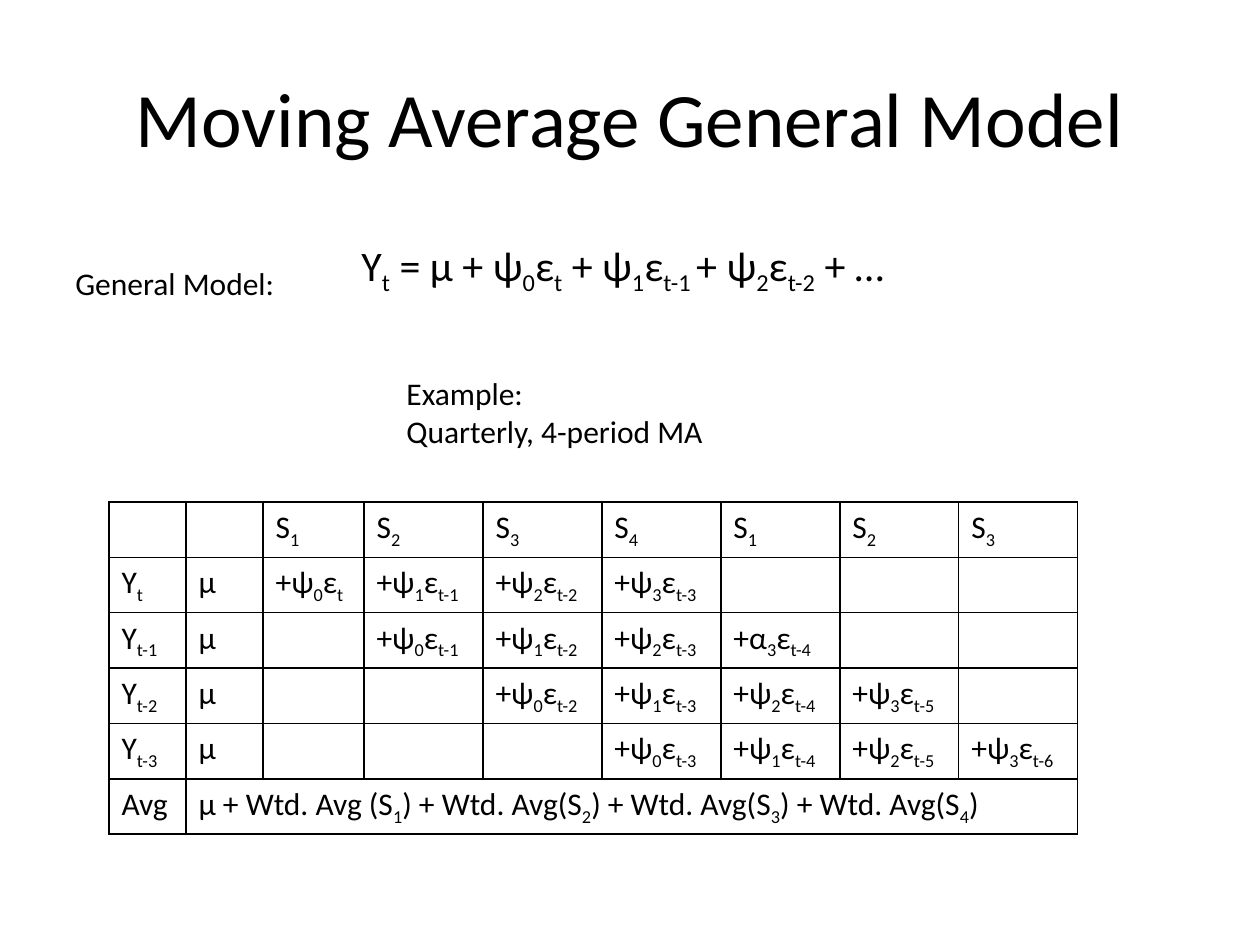
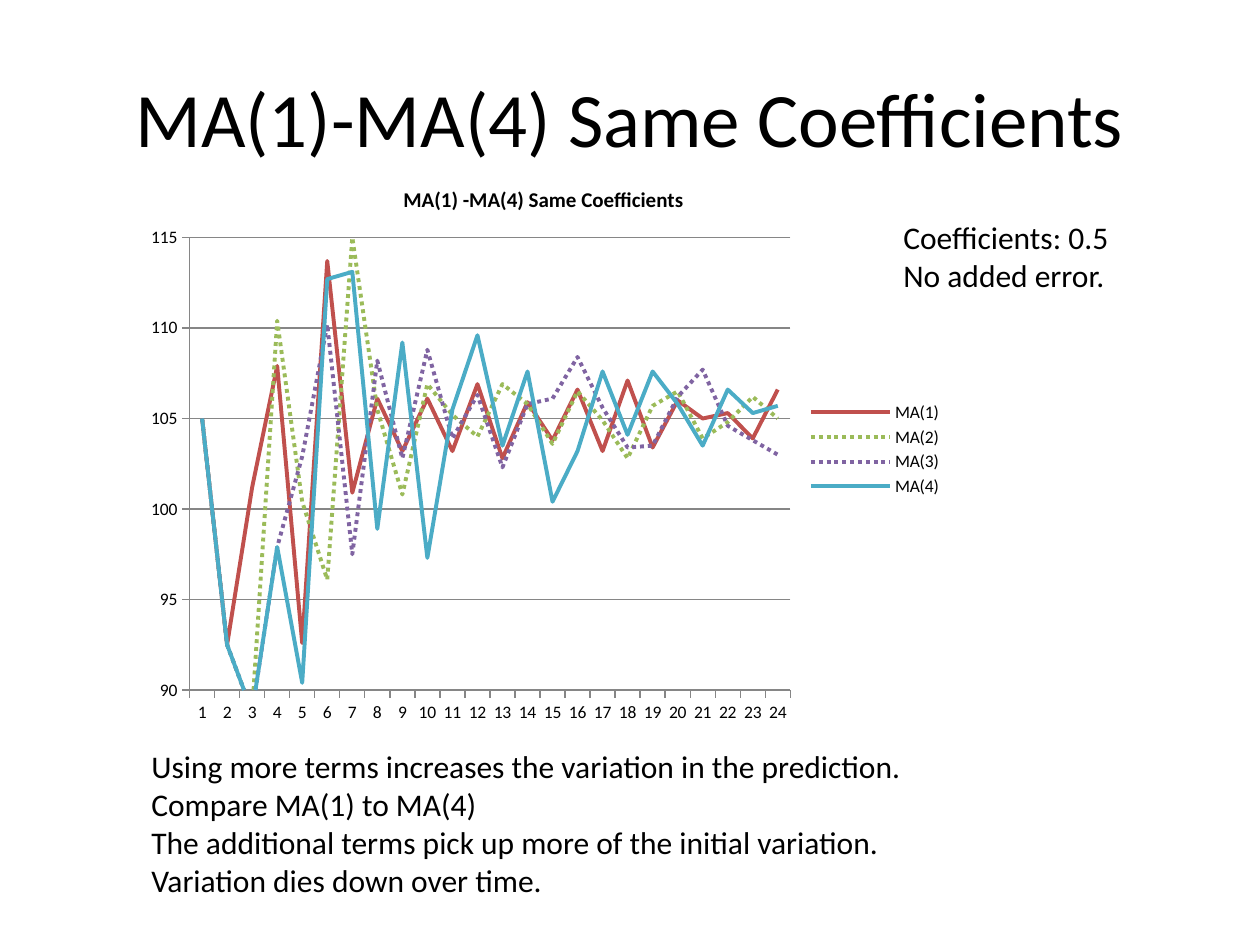
from lxml.etree import SubElement
from pptx import Presentation
from pptx.chart.data import CategoryChartData
from pptx.dml.color import RGBColor
from pptx.enum.chart import XL_CHART_TYPE as ChartType
from pptx.enum.chart import XL_LEGEND_POSITION as LegendSide
from pptx.enum.chart import XL_TICK_MARK as Tick
from pptx.enum.dml import MSO_LINE as Dash
from pptx.enum.text import MSO_ANCHOR as Anchor
from pptx.enum.text import MSO_AUTO_SIZE as AutoSize
from pptx.enum.text import PP_ALIGN as Align
from pptx.oxml.ns import qn
from pptx.util import Emu, Pt

# Shared style
PX = 914400 / 126
FONT = "Calibri"
BLACK = RGBColor(0x00, 0x00, 0x00)
GRAY = RGBColor(0x86, 0x86, 0x86)
RED = RGBColor(0xC0, 0x50, 0x4D)
GREEN = RGBColor(0x9B, 0xBB, 0x59)
PURPLE = RGBColor(0x80, 0x64, 0xA2)
TEAL = RGBColor(0x4B, 0xAC, 0xC6)
TITLE_AREA = (63, 38, 1134, 157)

# Slide 1 content: subscripts stand in braces
MODEL_TITLE = "Moving Average General Model"
MODEL_LABEL = "General Model:"
MODEL_FORMULA = "Y{t} = μ + ψ{0}ε{t} + ψ{1}ε{t-1 }+ ψ{2}ε{t-2} + …"
EXAMPLE = ["Example:", "Quarterly, 4-period MA"]
MODEL_ROWS = [
    ["", "", "S{1}", "S{2}", "S{3}", "S{4}", "S{1}", "S{2}", "S{3}"],
    ["Y{t}", "μ", "+ψ{0}ε{t}", "+ψ{1}ε{t-1}", "+ψ{2}ε{t-2}", "+ψ{3}ε{t-3}", "", "", ""],
    ["Y{t-1}", "μ", "", "+ψ{0}ε{t-1}", "+ψ{1}ε{t-2}", "+ψ{2}ε{t-3}", "+α{3}ε{t-4}", "", ""],
    ["Y{t-2}", "μ", "", "", "+ψ{0}ε{t-2}", "+ψ{1}ε{t-3}", "+ψ{2}ε{t-4}", "+ψ{3}ε{t-5}", ""],
    ["Y{t-3}", "μ", "", "", "", "+ψ{0}ε{t-3}", "+ψ{1}ε{t-4}", "+ψ{2}ε{t-5}", "+ψ{3}ε{t-6}"],
    ["Avg", "μ + Wtd. Avg (S{1}) + Wtd. Avg(S{2}) + Wtd. Avg(S{3}) + Wtd. Avg(S{4})"]
    + [""] * 7,
]
COLUMN_WIDTHS = [77, 77, 101] + [119] * 6
ROW_HEIGHT = 55

# Slide 2 content
CHART_SLIDE_TITLE = "MA(1)-MA(4) Same Coefficients"
CHART_TITLE = "MA(1) -MA(4) Same Coefficients"
SETTINGS = ["Coefficients: 0.5", "No added error."]
FINDINGS = [
    "Using more terms increases the variation in the prediction.",
    "Compare MA(1) to MA(4)",
    "The additional terms pick up more of the initial variation.",
    "Variation dies down over time.",
]
SERIES = [
    ("MA(1)", RED, Dash.SOLID,
     [105, 92.5, 101.2, 107.9, 92.6, 113.7, 100.9, 106.1, 103.2, 106.1, 103.2, 106.9,
      102.8, 105.9, 103.8, 106.6, 103.2, 107.1, 103.4, 106, 105, 105.3, 103.9, 106.6]),
    ("MA(2)", GREEN, Dash.ROUND_DOT,
     [105, 92.5, 88.8, 110.4, 100.4, 96.1, 115, 105.5, 100.8, 106.9, 105.2, 104,
      106.9, 105.8, 103.6, 106.5, 104.9, 102.8, 105.7, 106.5, 103.9, 104.8, 106.2, 105]),
    ("MA(3)", PURPLE, Dash.ROUND_DOT,
     [105, 92.5, 88.8, 97.9, 102.9, 110.2, 97.5, 108.2, 102.8, 108.8, 103.9, 106.3,
      102.3, 105.8, 106.1, 108.4, 105.6, 103.4, 103.5, 106.2, 107.7, 104.6, 103.8, 103]),
    ("MA(4)", TEAL, Dash.SOLID,
     [105, 92.5, 88.8, 97.9, 90.4, 112.7, 113.1, 98.9, 109.2, 97.3, 105.5, 109.6,
      103.5, 107.6, 100.4, 103.2, 107.6, 104.1, 107.6, 105.8, 103.5, 106.6, 105.3, 105.7]),
]
PLOT_LAYOUT = {"x": 0.07, "y": 0.13, "w": 0.73, "h": 0.79}


def scaled(*lengths):
    return [Emu(round(length * PX)) for length in lengths]


def style_font(font, size, bold=False):
    font.name, font.size, font.bold = FONT, Pt(size), bold
    font.color.rgb = BLACK


def write_text(frame, lines, size=18, align=Align.LEFT):
    """Fill a text frame, one paragraph a line, with {subscripts}."""
    for index, line in enumerate(lines):
        para = frame.paragraphs[0] if index == 0 else frame.add_paragraph()
        para.alignment = align
        for part, words in enumerate(line.replace("}", "{").split("{")):
            if not words:
                continue
            span = para.add_run()
            span.text = words
            style_font(span.font, size)
            if part % 2:
                span._r.get_or_add_rPr().set("baseline", "-25000")


def add_text(page, area, lines, wrap=True, anchor=Anchor.TOP, grow=True, **text_format):
    frame = page.shapes.add_textbox(*scaled(*area)).text_frame
    frame.word_wrap = wrap
    frame.vertical_anchor = anchor
    frame.auto_size = AutoSize.SHAPE_TO_FIT_TEXT if grow else AutoSize.NONE
    write_text(frame, lines, **text_format)


def add_page(deck, title):
    page = deck.slides.add_slide(deck.slide_layouts[6])
    add_text(page, TITLE_AREA, [title], anchor=Anchor.MIDDLE, grow=False,
             size=44, align=Align.CENTER)
    return page


def add_borders(cell):
    properties = cell._tc.get_or_add_tcPr()
    for side in ("lnL", "lnR", "lnT", "lnB"):
        line = SubElement(properties, qn(f"a:{side}"), w=str(Pt(1)))
        fill = SubElement(line, qn("a:solidFill"))
        SubElement(fill, qn("a:srgbClr"), val=str(BLACK))


def add_model_table(page, left, top):
    area = scaled(left, top, sum(COLUMN_WIDTHS), ROW_HEIGHT * len(MODEL_ROWS))
    table = page.shapes.add_table(len(MODEL_ROWS), len(COLUMN_WIDTHS), *area).table
    table.first_row = table.horz_banding = False
    for column, width in zip(table.columns, scaled(*COLUMN_WIDTHS)):
        column.width = width
    for row, texts in zip(table.rows, MODEL_ROWS):
        row.height = scaled(ROW_HEIGHT)[0]
        for cell, text in zip(row.cells, texts):
            write_text(cell.text_frame, [text])
            add_borders(cell)
            cell.fill.background()
    # The average row spans every column after its label
    last_row, last_column = len(MODEL_ROWS) - 1, len(COLUMN_WIDTHS) - 1
    table.cell(last_row, 1).merge(table.cell(last_row, last_column))


def place_plot(chart):
    plot_area = chart._chartSpace.chart.plotArea
    for old in plot_area.findall(qn("c:layout")):
        plot_area.remove(old)
    layout = SubElement(plot_area, qn("c:layout"))
    plot_area.insert(0, layout)
    manual = SubElement(layout, qn("c:manualLayout"))
    SubElement(manual, qn("c:layoutTarget"), val="inner")
    for key in ("x", "y"):
        SubElement(manual, qn(f"c:{key}Mode"), val="edge")
    for key, share in PLOT_LAYOUT.items():
        SubElement(manual, qn(f"c:{key}"), val=str(share))


def add_line_chart(page, area):
    data = CategoryChartData()
    data.categories = [str(period + 1) for period in range(len(SERIES[0][3]))]
    for name, _, _, values in SERIES:
        data.add_series(name, values)
    chart = page.shapes.add_chart(ChartType.LINE, *scaled(*area), data).chart
    style_font(chart.font, 10)

    # Title and legend
    chart.has_title = True
    heading = chart.chart_title.text_frame
    heading.text = CHART_TITLE
    style_font(heading.paragraphs[0].runs[0].font, 12, bold=True)
    chart.has_legend = True
    chart.legend.position = LegendSide.RIGHT
    chart.legend.include_in_layout = False

    # Axes
    scale = chart.value_axis
    scale.minimum_scale, scale.maximum_scale, scale.major_unit = 90, 115, 5
    scale.has_major_gridlines = True
    for axis in (chart.category_axis, scale):
        axis.major_tick_mark, axis.minor_tick_mark = Tick.OUTSIDE, Tick.NONE
    for part in (chart.category_axis, scale, scale.major_gridlines):
        part.format.line.color.rgb = GRAY
        part.format.line.width = Pt(0.75)

    # Lines
    for series, (_, color, dash, _) in zip(chart.plots[0].series, SERIES):
        series.smooth = False
        line = series.format.line
        line.color.rgb, line.width, line.dash_style = color, Pt(2.25), dash
    place_plot(chart)


def main():
    deck = Presentation()
    deck.slide_width, deck.slide_height = scaled(1260, 945)

    page = add_page(deck, MODEL_TITLE)
    add_model_table(page, 109, 502)
    add_text(page, (63, 258, 227, 50), [MODEL_LABEL], wrap=False)
    add_text(page, (394, 368, 407, 89), EXAMPLE)
    add_text(page, (349, 233, 571, 63), [MODEL_FORMULA], wrap=False, size=24)

    page = add_page(deck, CHART_SLIDE_TITLE)
    add_line_chart(page, (132, 163, 823, 573))
    add_text(page, (891, 212, 233, 89), SETTINGS, wrap=False)
    add_text(page, (139, 741, 844, 165), FINDINGS)

    deck.save("out.pptx")


if __name__ == "__main__":
    main()
